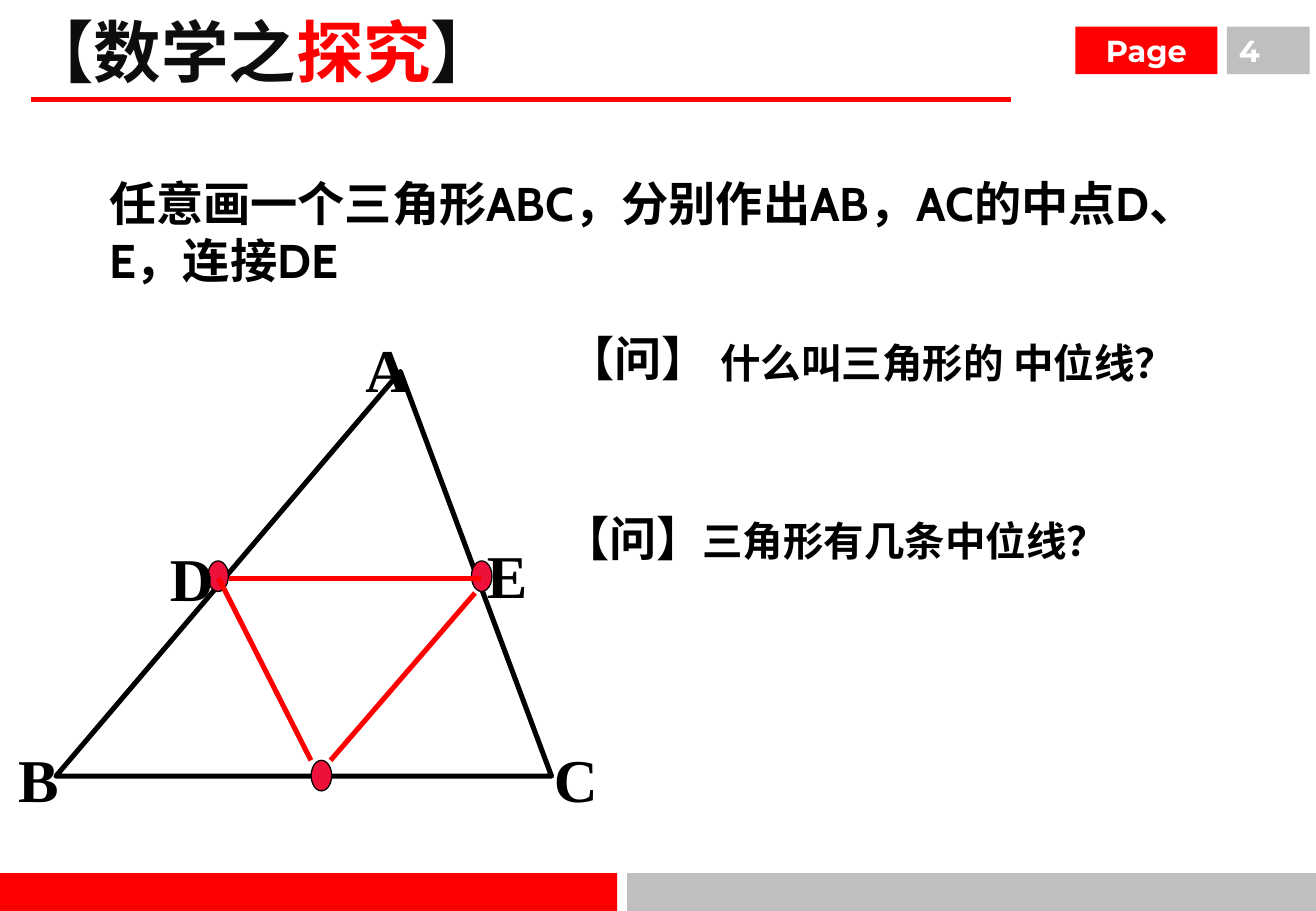
from lxml.etree import SubElement
from pptx import Presentation
from pptx.dml.color import RGBColor
from pptx.enum.shapes import MSO_CONNECTOR, MSO_SHAPE
from pptx.enum.text import MSO_ANCHOR, PP_ALIGN
from pptx.oxml.ns import qn
from pptx.util import Cm, Pt

BLACK = RGBColor(0x00, 0x00, 0x00)
INK = RGBColor(0x0D, 0x0D, 0x0D)
RED = RGBColor(0xFF, 0x00, 0x00)
CRIMSON = RGBColor(0xEC, 0x10, 0x3A)
GRAY = RGBColor(0xBF, 0xBF, 0xBF)
WHITE = RGBColor(0xFF, 0xFF, 0xFF)
CHINESE_FONT = "Noto Sans CJK SC"
SERIF = "Times New Roman"

# All lengths are in centimetres; boxes are left, top, width, height.
SLIDE_SIZE = (27.51, 19.05)
TRIANGLE = (1.17, 7.77, 10.36, 8.46)
APEX = 0.695
DOT_SIZE = (0.43, 0.64)
DOT_CENTRES = [(4.56, 12.05), (10.07, 12.05), (6.72, 16.22)]
LABEL_SIZE = (1.9, 1.78)
LABELS = [
    ("A", 7.39, 6.81),
    ("B", 0.13, 15.39),
    ("C", 11.33, 15.39),
    ("D", 3.3, 11.18),
    ("E", 9.93, 11.13),
]
RED_LINES = [
    ((4.78, 12.09), (10.06, 12.09)),
    ((4.57, 12.09), (6.5, 15.9)),
    ((9.93, 12.4), (6.91, 15.9)),
    ((0.64, 2.08), (21.13, 2.08)),
]
BARS = [
    ((0, 18.26, 12.9, 0.79), RED, "", PP_ALIGN.LEFT),
    ((13.11, 18.26, 14.4, 0.79), GRAY, "", PP_ALIGN.LEFT),
    ((22.48, 0.56, 2.97, 0.99), RED, "Page", PP_ALIGN.CENTER),
    ((25.65, 0.56, 1.73, 0.99), GRAY, "4", PP_ALIGN.LEFT),
]
TITLE = [("【数学之", INK), ("探究", RED), ("】", INK)]
TASK = "任意画一个三角形ABC，分别作出AB，AC的中点D、E，连接DE"
QUESTION_TAG = "【问】"
TAG_BOXES = [(11.61, 6.76, 3.53, 1.45), (11.51, 10.52, 3.53, 1.45)]
# text, box, font, left margin, wrapped
QUESTIONS = [
    ("什么叫三角形的 中位线？", (13.97, 6.43, 12.12, 1.8), "Cabin", 1.09, True),
    ("三角形有几条中位线？", (14.43, 10.16, 9.12, 1.8), "Arial", 0.25, False),
]


def lengths(values):
    return [Cm(value) for value in values]


def add_run(paragraph, text, size, font, color):
    run = paragraph.add_run()
    run.text = text
    run.font.size = Pt(size)
    run.font.bold = True
    run.font.name = font
    run.font.color.rgb = color
    SubElement(run.font._element, qn("a:ea")).set("typeface", CHINESE_FONT)


def add_text(slide, box, runs, size, font, wrap=True):
    """Add a one-paragraph text box from (text, colour) runs."""
    frame = slide.shapes.add_textbox(*lengths(box)).text_frame
    frame.word_wrap = wrap
    for text, color in runs:
        add_run(frame.paragraphs[0], text, size, font, color)
    return frame


def add_filled(slide, kind, box, fill, outline_width=0):
    """Add a preset shape, with a black outline if a width is given."""
    shape = slide.shapes.add_shape(kind, *lengths(box))
    shape.shadow.inherit = False
    shape.fill.solid()
    shape.fill.fore_color.rgb = fill
    if outline_width:
        shape.line.color.rgb = BLACK
        shape.line.width = Pt(outline_width)
    else:
        shape.line.fill.background()
    return shape


def add_red_line(slide, start, end):
    line = slide.shapes.add_connector(
        MSO_CONNECTOR.STRAIGHT, *lengths(start + end))
    line.line.color.rgb = RED
    line.line.width = Pt(3)
    SubElement(line._element.spPr, qn("a:effectLst"))


def draw_triangle(slide):
    triangle = add_filled(
        slide, MSO_SHAPE.ISOSCELES_TRIANGLE, TRIANGLE, WHITE, 3)
    triangle.adjustments[0] = APEX
    width, height = DOT_SIZE
    for x, y in DOT_CENTRES:
        box = (x - width / 2, y - height / 2, width, height)
        add_filled(slide, MSO_SHAPE.OVAL, box, CRIMSON, 0.75)
    for letter, left, top in LABELS:
        add_text(slide, (left, top) + LABEL_SIZE, [(letter, BLACK)], 36, SERIF)


def draw_bars(slide):
    for box, fill, text, alignment in BARS:
        bar = add_filled(slide, MSO_SHAPE.RECTANGLE, box, fill)
        if text:
            bar.text_frame.vertical_anchor = MSO_ANCHOR.MIDDLE
            paragraph = bar.text_frame.paragraphs[0]
            paragraph.alignment = alignment
            add_run(paragraph, text, 18, "Montserrat", WHITE)


def draw_texts(slide):
    add_text(slide, (0.3, 0.08, 10.67, 1.96), TITLE, 40, CHINESE_FONT)
    add_text(slide, (2.03, 3.53, 24.54, 2.64), [(TASK, BLACK)], 28, "Cabin")
    for box in TAG_BOXES:
        add_text(slide, box, [(QUESTION_TAG, BLACK)], 28, SERIF, False)
    for text, box, font, margin, wrap in QUESTIONS:
        frame = add_text(slide, box, [(text, BLACK)], 24, font, wrap)
        frame.margin_left = Cm(margin)
        frame.paragraphs[0].line_spacing = 1.5


def main():
    presentation = Presentation()
    presentation.slide_width, presentation.slide_height = lengths(SLIDE_SIZE)
    slide = presentation.slides.add_slide(presentation.slide_layouts[6])
    draw_triangle(slide)
    for start, end in RED_LINES:
        add_red_line(slide, start, end)
    draw_bars(slide)
    draw_texts(slide)
    presentation.save("out.pptx")


if __name__ == "__main__":
    main()
